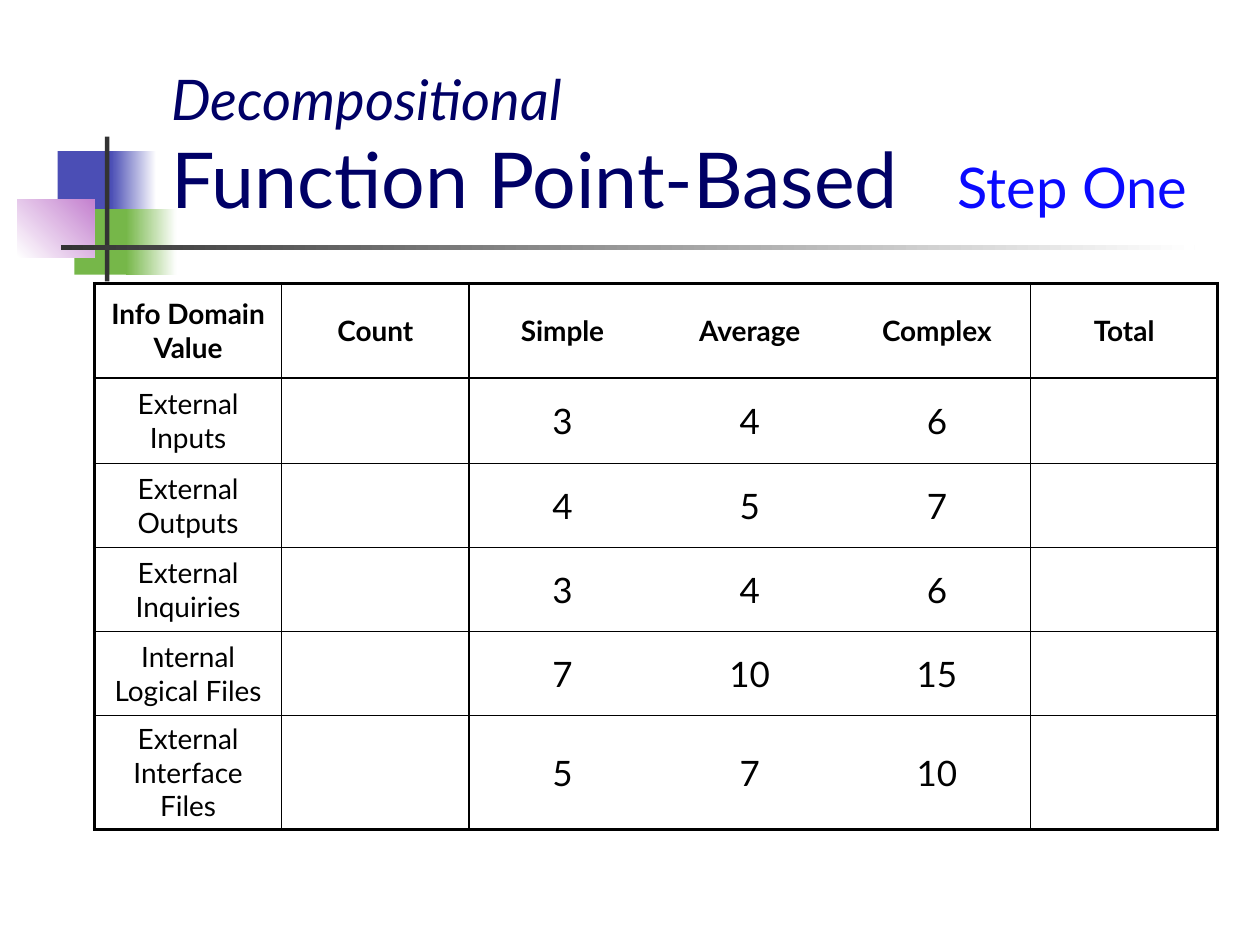
from dataclasses import dataclass

from lxml.etree import SubElement
from pptx import Presentation
from pptx.dml.color import RGBColor
from pptx.enum.shapes import MSO_SHAPE
from pptx.enum.text import MSO_ANCHOR as ANCHOR, MSO_AUTO_SIZE as AUTO_SIZE, PP_ALIGN as ALIGN
from pptx.oxml.ns import qn
from pptx.util import Pt

FONT = "Lato"
BLACK, WHITE, CHARCOAL = "000000", "FFFFFF", "333333"
NAVY, BLUE = "000066", "0A0AFF"
INDIGO, GREEN, ORCHID = "4B4EB5", "76B749", "C481CF"
THIN, THICK = 1, 2.25

COL_WIDTH = 107
ROW_HEIGHTS = (54, 49, 48, 48, 48, 65)
ROWS = (
    ("Info Domain Value", "Count", "Simple", "Average", "Complex", "Total"),
    ("External Inputs", "", "3", "4", "6", ""),
    ("External Outputs", "", "4", "5", "7", ""),
    ("External Inquiries", "", "3", "4", "6", ""),
    ("Internal Logical Files", "", "7", "10", "15", ""),
    ("External Interface Files", "", "5", "7", "10", ""),
)
# One width per vertical rule, left to right; 0 leaves the weights undivided.
VERTICAL_RULES = (THICK, THIN, THIN, 0, 0, THIN, THICK)
HORIZONTAL_RULES = (THICK, *[THIN] * (len(ROWS) - 1), THICK)


@dataclass
class Block:
    """A decorative rectangle, fading from start to end when end is given."""
    left: float
    top: float
    width: float
    height: float
    start: str
    end: str = ""
    angle: float = 0


BLOCKS = (
    Block(33, 86.4, 34.5, 37.5, INDIGO),
    Block(63.4, 86.4, 26, 37.5, INDIGO, WHITE),
    Block(42.5, 119.5, 33, 37.5, GREEN),
    Block(72, 119.5, 29, 37.5, GREEN, WHITE),
    Block(9.8, 113.8, 44.2, 33.2, WHITE, ORCHID, 45),
    Block(60, 78, 2.5, 82.8, CHARCOAL),
    Block(34.7, 140.2, 648, 2.5, CHARCOAL, WHITE),
)


def color(value: str) -> RGBColor:
    return RGBColor.from_string(value)


def format_run(r, size: float, fill: str, bold: bool = False, italic: bool = False) -> None:
    r.font.name, r.font.size = FONT, Pt(size)
    r.font.bold, r.font.italic = bold, italic
    r.font.color.rgb = color(fill)


def draw_block(slide, block: Block) -> None:
    sp = slide.shapes.add_shape(MSO_SHAPE.RECTANGLE, Pt(block.left), Pt(block.top),
                                Pt(block.width), Pt(block.height))
    sp.shadow.inherit = False
    sp.line.fill.background()
    if block.end:
        sp.fill.gradient()
        sp.fill.gradient_angle = block.angle
        for stop, value in zip(sp.fill.gradient_stops, (block.start, block.end)):
            stop.color.rgb = color(value)
    else:
        sp.fill.solid()
        sp.fill.fore_color.rgb = color(block.start)


def write_title(slide) -> None:
    title = slide.shapes.title
    title.left, title.top, title.width, title.height = Pt(90.7), Pt(16.5), Pt(613.5), Pt(115.2)
    tf = title.text_frame
    tf.word_wrap, tf.auto_size = True, AUTO_SIZE.NONE
    tf.vertical_anchor = ANCHOR.BOTTOM
    p = tf.paragraphs[0]
    p.text = "Decompositional \vFunction Point-Based   "
    p.alignment = ALIGN.LEFT
    p.add_run().text = "Step One"
    heading, method, step = p.runs
    format_run(heading, 32, NAVY, italic=True)
    format_run(method, 44, NAVY)
    format_run(step, 32, BLUE)


def set_borders(cell, **widths: float) -> None:
    """Set cell borders, named by side (L, R, T, B); a width of 0 hides the side."""
    tc_pr = cell._tc.get_or_add_tcPr()
    for index, (side, width) in enumerate(widths.items()):
        ln = tc_pr.makeelement(qn(f"a:ln{side}"), {"w": str(Pt(width))})
        tc_pr.insert(index, ln)
        if width:
            fill = SubElement(ln, qn("a:solidFill"))
            SubElement(fill, qn("a:srgbClr"), val=BLACK)
        else:
            SubElement(ln, qn("a:noFill"))


def fill_cell(cell, text: str, row: int, col: int) -> None:
    cell.fill.background()
    cell.vertical_anchor = ANCHOR.MIDDLE
    set_borders(cell, L=VERTICAL_RULES[col], R=VERTICAL_RULES[col + 1],
                T=HORIZONTAL_RULES[row], B=HORIZONTAL_RULES[row + 1])
    if text:
        p = cell.text_frame.paragraphs[0]
        p.text = text
        p.alignment = ALIGN.CENTER
        is_header = row == 0
        format_run(p.runs[0], 16 if is_header or col == 0 else 20, BLACK, bold=is_header)


def draw_table(slide) -> None:
    n_cols = len(ROWS[0])
    frame = slide.shapes.add_table(len(ROWS), n_cols, Pt(54), Pt(162),
                                   Pt(COL_WIDTH * n_cols), Pt(sum(ROW_HEIGHTS)))
    table = frame.table
    table.horz_banding = False
    for column in table.columns:
        column.width = Pt(COL_WIDTH)
    for i, (height, texts) in enumerate(zip(ROW_HEIGHTS, ROWS)):
        table.rows[i].height = Pt(height)
        for j, text in enumerate(texts):
            fill_cell(table.cell(i, j), text, i, j)


def main() -> None:
    prs = Presentation()
    prs.slide_width, prs.slide_height = Pt(720), Pt(540)
    slide = prs.slides.add_slide(prs.slide_layouts[5])
    for block in BLOCKS:
        draw_block(slide, block)
    write_title(slide)
    draw_table(slide)
    prs.save("out.pptx")


if __name__ == "__main__":
    main()
